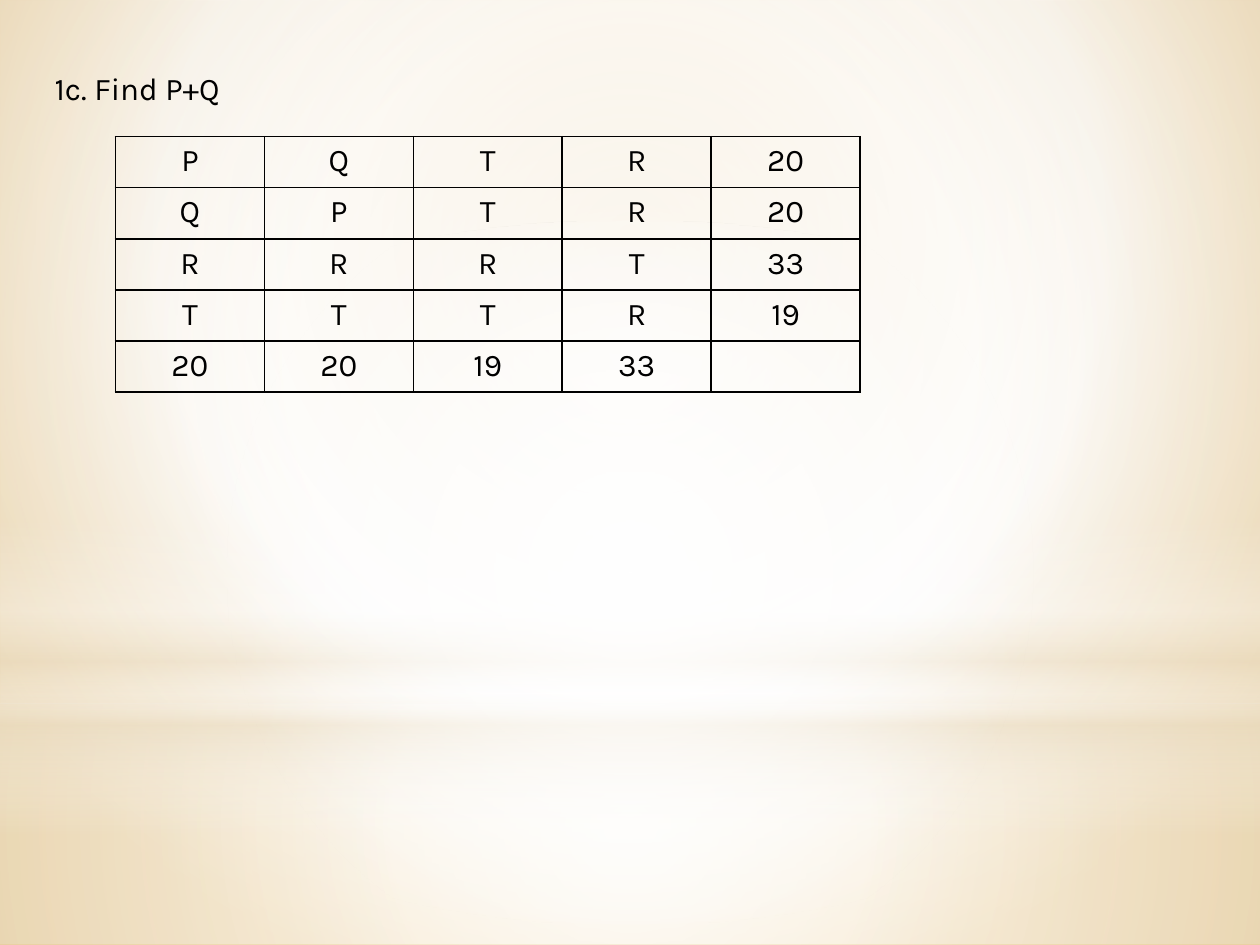
from dataclasses import dataclass
from typing import Any, Optional

import lxml.etree
import pptx
import pptx.dml.color
import pptx.enum.shapes
import pptx.enum.text
import pptx.oxml.ns
import pptx.util

WIDE, HIGH = 720, 540
FONT, SIZE, INK = "Karla", 18, "000000"
WHITE, SAND = "FFFFFF", "EBDDC3"
RECT = pptx.enum.shapes.MSO_SHAPE.RECTANGLE
OVAL = pptx.enum.shapes.MSO_SHAPE.OVAL
MID = (50, 50, 50, 50)
ROWS = ["P Q T R 20", "Q P T R 20", "R R R T 33", "T T T R 19", "20 20 19 33"]
COUNT = len(ROWS)
LEFT, TOP, CELL, ROW = 66, 78, 85.1, 29.25


@dataclass
class Stop:
    pos: int
    tone: str
    alpha: int = 100


@dataclass
class Glow:
    form: Any
    top: float
    high: float
    stops: list[Stop]
    focus: Optional[tuple[int, int, int, int]] = MID


GLOWS = [
    Glow(RECT, 402, 138, [Stop(0, WHITE, 91), Stop(37, WHITE, 76), Stop(100, SAND, 79)]),
    Glow(RECT, 0, 402, [Stop(0, WHITE, 89), Stop(48, WHITE, 62), Stop(100, SAND, 79)]),
    Glow(RECT, 297, 180, [Stop(0, WHITE, 0), Stop(29, WHITE, 30), Stop(45, SAND, 40),
                          Stop(55, WHITE, 26), Stop(65, SAND, 60), Stop(100, WHITE, 0)], None),
    Glow(OVAL, 126, 402, [Stop(0, WHITE), Stop(56, WHITE, 0)]),
]


def tint(tone: str) -> pptx.dml.color.RGBColor:
    return pptx.dml.color.RGBColor.from_string(tone)


def add(root: Any, tag: str, **attrs: Any) -> Any:
    node = lxml.etree.SubElement(root, pptx.oxml.ns.qn(tag))
    for key, val in attrs.items():
        node.set(key, str(val))
    return node


def blend(fill: Any, root: Any, stops: list[Stop], focus: Optional[tuple]) -> None:
    fill.gradient()
    grad = root.find(".//" + pptx.oxml.ns.qn("a:gradFill"))
    for child in list(grad):
        grad.remove(child)
    group = add(grad, "a:gsLst")
    for stop in stops:
        tone = add(add(group, "a:gs", pos=stop.pos * 1000), "a:srgbClr", val=stop.tone)
        if stop.alpha < 100:
            add(tone, "a:alpha", val=stop.alpha * 1000)
    if focus is None:
        add(grad, "a:lin", ang=5400000, scaled=0)
    else:
        sides = {side: part * 1000 for side, part in zip("ltrb", focus)}
        add(add(grad, "a:path", path="circle"), "a:fillToRect", **sides)


def draw(slide: Any, glow: Glow) -> None:
    shape = slide.shapes.add_shape(
        glow.form, 0, pptx.util.Pt(glow.top), pptx.util.Pt(WIDE), pptx.util.Pt(glow.high))
    shape.shadow.inherit = False
    shape.line.fill.background()
    blend(shape.fill, shape.element, glow.stops, glow.focus)


def write(frame: Any, text: str, align: Any) -> None:
    para = frame.paragraphs[0]
    para.alignment = align
    run = para.add_run()
    run.text = text
    run.font.name = FONT
    run.font.size = pptx.util.Pt(SIZE)
    run.font.color.rgb = tint(INK)


def head(slide: Any, text: str) -> None:
    title = slide.shapes.title
    title.element.getparent().append(title.element)
    title.left, title.top = pptx.util.Pt(24), pptx.util.Pt(36)
    title.width, title.height = pptx.util.Pt(684), pptx.util.Pt(29)
    frame = title.text_frame
    frame.word_wrap = True
    frame.auto_size = pptx.enum.text.MSO_AUTO_SIZE.SHAPE_TO_FIT_TEXT
    frame.vertical_anchor = pptx.enum.text.MSO_ANCHOR.TOP
    write(frame, text, pptx.enum.text.PP_ALIGN.LEFT)


def edge(cell: Any) -> None:
    props = cell._tc.get_or_add_tcPr()
    for side in "LRTB":
        line = add(props, "a:ln" + side, w=pptx.util.Pt(1))
        add(add(line, "a:solidFill"), "a:srgbClr", val=INK)
    cell.fill.background()


def grid(slide: Any) -> None:
    table = slide.shapes.add_table(
        COUNT, COUNT, pptx.util.Pt(LEFT), pptx.util.Pt(TOP),
        pptx.util.Pt(CELL * COUNT), pptx.util.Pt(ROW * COUNT)).table
    table.first_row = table.horz_banding = False
    for col in table.columns:
        col.width = pptx.util.Pt(CELL)
    for row in table.rows:
        row.height = pptx.util.Pt(ROW)
    for cell in table.iter_cells():
        edge(cell)
    for row, line in enumerate(ROWS):
        for col, text in enumerate(line.split()):
            write(table.cell(row, col).text_frame, text, pptx.enum.text.PP_ALIGN.CENTER)


def main() -> None:
    deck = pptx.Presentation()
    deck.slide_width, deck.slide_height = pptx.util.Pt(WIDE), pptx.util.Pt(HIGH)
    slide = deck.slides.add_slide(deck.slide_layouts[5])
    base = [Stop(0, "ECD7B0"), Stop(60, WHITE), Stop(100, "E6BE74")]
    blend(slide.background.fill, slide.element, base, (20, 10, 20, 60))
    for glow in GLOWS:
        draw(slide, glow)
    head(slide, "1c. Find P+Q")
    grid(slide)
    deck.save("out.pptx")


if __name__ == "__main__":
    main()
